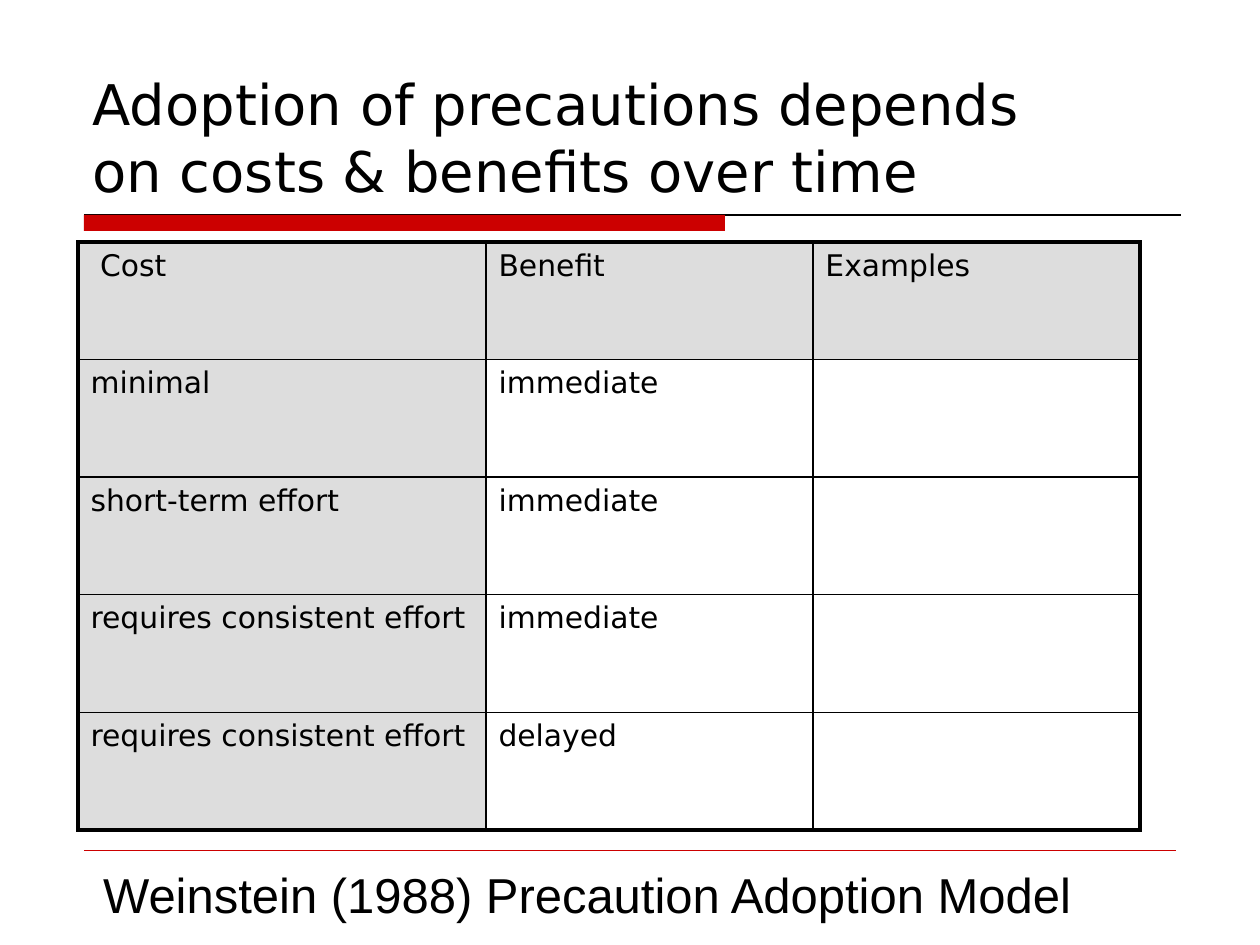
from lxml import etree
from pptx import Presentation, util as u
from pptx.dml.color import RGBColor
from pptx.enum import shapes, text
from pptx.oxml import parse_xml
from pptx.oxml.ns import nsdecls, qn

SCALE = 914400 / 126
COLORS = {"ink": "000000", "accent": "CC0000", "shade": "DDDDDD"}
BODY_FONT, CAPTION_FONT = "DejaVu Sans", "Arial"
COL_WIDTHS = (408, 327, 327)
ROWS = (
    (" Cost", "Benefit", "Examples"),
    ("minimal", "immediate", ""),
    ("short-term effort", "immediate", ""),
    ("requires consistent effort", "immediate", ""),
    ("requires consistent effort", "delayed", ""),
)


def px(n):
    return u.Emu(round(n * SCALE))


def rgb(name):
    return RGBColor.from_string(COLORS[name])


def format_runs(tf, font, size):
    for p in tf.paragraphs:
        for r in p.runs:
            r.font.name, r.font.size = font, u.Pt(size)
            r.font.color.rgb = rgb("ink")


def add_text(slide, box, content, font, size, wrap=True):
    tf = slide.shapes.add_textbox(*map(px, box)).text_frame
    tf.word_wrap = wrap
    tf.text = content
    format_runs(tf, font, size)
    return tf


def add_bar(slide, box):
    sp = slide.shapes.add_shape(shapes.MSO_SHAPE.RECTANGLE, *map(px, box))
    sp.shadow.inherit = False
    sp.fill.solid()
    sp.fill.fore_color.rgb = rgb("accent")
    sp.line.fill.background()


def add_rule(slide, left, right, y, color, width):
    line = slide.shapes.add_connector(
        shapes.MSO_CONNECTOR.STRAIGHT, px(left), px(y), px(right), px(y))
    line.line.color.rgb = rgb(color)
    line.line.width = u.Pt(width)
    etree.SubElement(line._element.spPr, qn("a:effectLst"))


def set_borders(cell, widths):
    """Put left, right, top and bottom borders ahead of the cell's fill."""
    tc_pr = cell._tc.get_or_add_tcPr()
    for i, (side, width) in enumerate(zip("LRTB", widths)):
        tc_pr.insert(i, parse_xml(
            f'<a:ln{side} {nsdecls("a")} w="{u.Pt(width)}"><a:solidFill>'
            f'<a:srgbClr val="{COLORS["ink"]}"/></a:solidFill></a:ln{side}>'))


def add_cost_table(slide, left, top, height):
    last_row, last_col = len(ROWS) - 1, len(COL_WIDTHS) - 1
    table = slide.shapes.add_table(
        len(ROWS), len(COL_WIDTHS), px(left), px(top),
        px(sum(COL_WIDTHS)), px(height)).table
    table.first_row = table.horz_banding = False
    for column, width in zip(table.columns, COL_WIDTHS):
        column.width = px(width)
    for i, row in enumerate(ROWS):
        for j, content in enumerate(row):
            cell = table.cell(i, j)
            cell.text = content
            format_runs(cell.text_frame, BODY_FONT, 17)
            if i == 0 or j == 0:
                cell.fill.solid()
                cell.fill.fore_color.rgb = rgb("shade")
            else:
                cell.fill.background()
            outer = (j == 0, j == last_col, i == 0, i == last_row)
            set_borders(cell, [2.25 if edge else 1 for edge in outer])


def main():
    prs = Presentation()
    prs.slide_width, prs.slide_height = px(1260), px(945)
    slide = prs.slides.add_slide(prs.slide_layouts[6])

    add_rule(slide, 84, 1181, 215, "ink", 0.75)
    add_bar(slide, (84, 215, 641, 16))
    add_rule(slide, 84, 1176, 850, "accent", 0.25)

    title = add_text(
        slide, (80, 42, 1102, 168),
        "Adoption of precautions depends\von costs & benefits over time",
        BODY_FONT, 32)
    title.vertical_anchor = text.MSO_ANCHOR.BOTTOM

    add_cost_table(slide, 78, 242, 588)

    caption = add_text(
        slide, (84, 858, 1006, 72),
        "Weinstein (1988) Precaution Adoption Model",
        CAPTION_FONT, 28, wrap=False)
    caption.auto_size = text.MSO_AUTO_SIZE.SHAPE_TO_FIT_TEXT
    caption.paragraphs[0].alignment = text.PP_ALIGN.CENTER

    prs.save("out.pptx")


if __name__ == "__main__":
    main()
